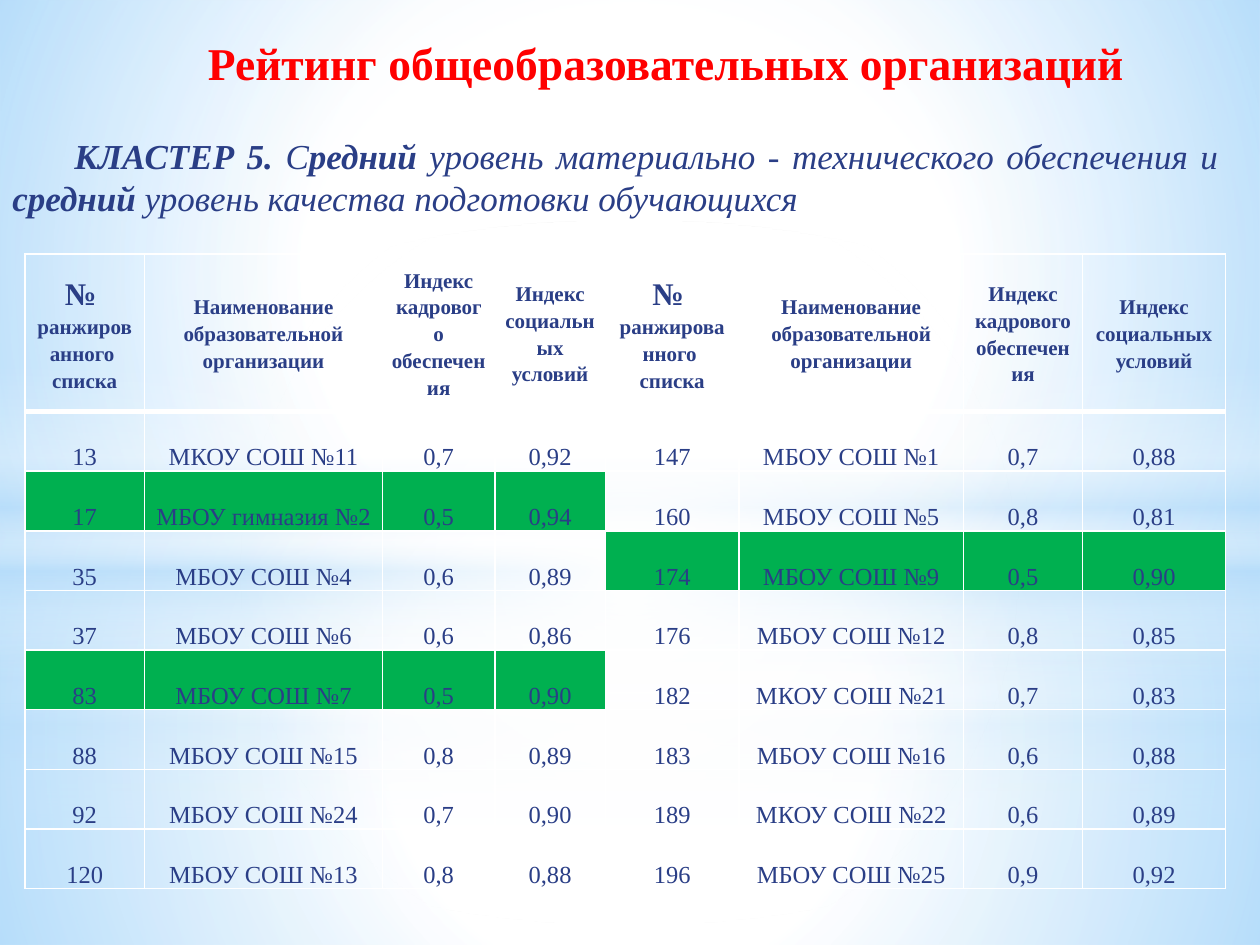
from lxml import etree
from pptx import Presentation
from pptx.dml.color import RGBColor
from pptx.enum.shapes import MSO_SHAPE
from pptx.enum.text import MSO_ANCHOR, PP_ALIGN
from pptx.oxml import parse_xml
from pptx.oxml.ns import nsdecls, qn
from pptx.util import Pt

RECT, OVAL = MSO_SHAPE.RECTANGLE, MSO_SHAPE.OVAL
MIDDLE, BOTTOM = MSO_ANCHOR.MIDDLE, MSO_ANCHOR.BOTTOM
LEFT, CENTER, JUSTIFY = PP_ALIGN.LEFT, PP_ALIGN.CENTER, PP_ALIGN.JUSTIFY


class Theme:
    font = "Times New Roman"
    white, sky = "FFFFFF", "B4DCFA"
    red, navy, green = "FF0000", "2A3E86", "00B050"
    title, lead, mark, head, body = 26, 20, 18, 12, 14


# Backdrop: gradient stops are (position, colour, opacity) in percent
def halo(mid, *alphas):
    return list(zip((0, mid, 100), (Theme.white, Theme.white, Theme.sky), alphas))


def glow(end):
    return [(0, Theme.white, 100), (end, Theme.white, 0)]


BAND = [(0, Theme.white, 0), (29, Theme.white, 30), (45, Theme.sky, 40),
        (55, Theme.white, 26), (65, Theme.sky, 60), (100, Theme.white, 0)]

# Kind, top, height, stops; every layer spans the slide width
LAYERS = [
    (RECT, 401.8, 138.2, halo(37, 91, 76, 79)),
    (RECT, 0, 401.8, halo(48, 89, 62, 79)),
    (RECT, 296.6, 180, BAND),
    (OVAL, 126, 401.8, glow(56)),
    (RECT, 304.6, 235.4, halo(37, 92, 77, 80)),
    (RECT, 0, 304.6, halo(48, 90, 63, 80)),
    (RECT, 208.8, 180, BAND),
    (OVAL, 126, 401.8, glow(54)),
]

# Table content
MARK = "№ "
HEADS = [
    [MARK, "ранжированного ", "списка"],
    ["Наименование образовательной организации"],
    ["Индекс кадрового обеспечения"],
    ["Индекс социальных условий"],
]
LOWER = [
    ("13", "МКОУ СОШ №11", "0,7", "0,92"),
    ("17", "МБОУ гимназия №2", "0,5", "0,94"),
    ("35", "МБОУ СОШ №4", "0,6", "0,89"),
    ("37", "МБОУ СОШ №6", "0,6", "0,86"),
    ("83", "МБОУ СОШ №7", "0,5", "0,90"),
    ("88", "МБОУ СОШ №15", "0,8", "0,89"),
    ("92", "МБОУ СОШ №24", "0,7", "0,90"),
    ("120", "МБОУ СОШ №13", "0,8", "0,88"),
]
UPPER = [
    ("147", "МБОУ СОШ №1", "0,7", "0,88"),
    ("160", "МБОУ СОШ №5", "0,8", "0,81"),
    ("174", "МБОУ СОШ №9", "0,5", "0,90"),
    ("176", "МБОУ СОШ №12", "0,8", "0,85"),
    ("182", "МКОУ СОШ №21", "0,7", "0,83"),
    ("183", "МБОУ СОШ №16", "0,6", "0,88"),
    ("189", "МКОУ СОШ №22", "0,6", "0,89"),
    ("196", "МБОУ СОШ №25", "0,9", "0,92"),
]
PICKED = {"17", "83", "174"}
WIDTHS = [68.4, 136, 64.2, 63.2, 76.4, 128.2, 68.2, 81.6]
HEAD_ROW, BODY_ROW = 90, 34.1

# Lead text as (text, bold)
LEAD = [
    ("КЛАСТЕР 5.", True), (" С", False), ("редний", True),
    (" уровень материально - технического обеспечения и ", False),
    ("средний", True), (" уровень качества подготовки обучающихся", False),
]


def write(para, text, size=Theme.body, color=Theme.navy, bold=False,
          italic=False, align=CENTER, spacing=None, indent=None):
    """Add one formatted run to a paragraph."""
    para.alignment = align
    if spacing:
        para.line_spacing = spacing
    if indent:
        props = para._p.get_or_add_pPr()
        props.set("marL", "0")
        props.set("indent", str(Pt(indent)))
    run = para.add_run()
    run.text = text
    font = run.font
    font.name, font.size = Theme.font, Pt(size)
    font.bold, font.italic = bold, italic
    font.color.rgb = RGBColor.from_string(color)


def add_layer(slide, kind, top, height, stops):
    shape = slide.shapes.add_shape(kind, 0, Pt(top), Pt(720), Pt(height))
    shape.shadow.inherit = False
    shape.line.fill.background()
    shape.fill.background()
    marks = "".join(
        f'<a:gs pos="{pos * 1000}"><a:srgbClr val="{color}">'
        f'<a:alpha val="{alpha * 1000}"/></a:srgbClr></a:gs>'
        for pos, color, alpha in stops)
    if stops is BAND:
        way = '<a:lin ang="5400000" scaled="0"/>'
    else:
        way = ('<a:path path="circle"><a:fillToRect l="50000" t="50000" '
               'r="50000" b="50000"/></a:path>')
    grad = parse_xml(f'<a:gradFill {nsdecls("a")} rotWithShape="1">'
                     f'<a:gsLst>{marks}</a:gsLst>{way}</a:gradFill>')
    props = shape._element.spPr
    props.replace(props.find(qn("a:noFill")), grad)


def add_box(slide, left, top, width, height, wrap):
    frame = slide.shapes.add_textbox(
        Pt(left), Pt(top), Pt(width), Pt(height)).text_frame
    frame.word_wrap = wrap
    frame.vertical_anchor = MIDDLE
    return frame.paragraphs[0]


def set_edges(cell, top=1, bottom=1):
    props = cell._tc.get_or_add_tcPr()
    for side, width in zip("LRTB", (1, 1, top, bottom)):
        line = etree.SubElement(props, qn(f"a:ln{side}"), w=str(Pt(width)))
        fill = etree.SubElement(line, qn("a:solidFill"))
        etree.SubElement(fill, qn("a:srgbClr"), val=Theme.white)


def fill_cell(cell, lines, anchor, fill=None, top=1, bottom=1, **style):
    set_edges(cell, top, bottom)
    cell.vertical_anchor = anchor
    cell.margin_left = cell.margin_right = Pt(5)
    cell.margin_top = cell.margin_bottom = 0
    if fill:
        cell.fill.solid()
        cell.fill.fore_color.rgb = RGBColor.from_string(fill)
    else:
        cell.fill.background()
    frame = cell.text_frame
    for i, line in enumerate(lines):
        para = frame.add_paragraph() if i else frame.paragraphs[0]
        look = style | {"size": Theme.mark} if line == MARK else style
        write(para, line, spacing=1.15, **look)


def add_rating(slide, left, top):
    count = len(LOWER)
    table = slide.shapes.add_table(
        count + 1, len(WIDTHS), Pt(left), Pt(top), Pt(sum(WIDTHS)),
        Pt(HEAD_ROW + count * BODY_ROW)).table
    table.first_row = table.horz_banding = False
    for col, width in zip(table.columns, WIDTHS):
        col.width = Pt(width)
    for i, row in enumerate(table.rows):
        row.height = Pt(BODY_ROW if i else HEAD_ROW)
    # Heading row, the same four labels for both halves
    for c, lines in enumerate(HEADS * 2):
        fill_cell(table.cell(0, c), lines, MIDDLE, bottom=3,
                  size=Theme.head, bold=True)
    # Schools, with the picked ones in green
    for half, schools in enumerate((LOWER, UPPER)):
        for r, school in enumerate(schools, 1):
            fill = Theme.green if school[0] in PICKED else None
            for c, text in enumerate(school, half * len(HEADS)):
                fill_cell(table.cell(r, c), [text], BOTTOM, fill,
                          top=3 if r == 1 else 1)


def main():
    deck = Presentation()
    deck.slide_width, deck.slide_height = Pt(720), Pt(540)
    slide = deck.slides.add_slide(deck.slide_layouts[6])

    # Backdrop
    for layer in LAYERS:
        add_layer(slide, *layer)

    # Title
    title = add_box(slide, 76.3, 16, 579, 39, False)
    write(title, "Рейтинг общеобразовательных организаций", size=Theme.title,
          color=Theme.red, bold=True, align=LEFT, indent=35.4)

    # Rating table
    add_rating(slide, 14.2, 145.2)

    # Lead
    lead = add_box(slide, 0, 73, 703.4, 55.7, True)
    for text, bold in LEAD:
        write(lead, text, size=Theme.lead, bold=bold, italic=True,
              align=JUSTIFY, indent=35.4)

    deck.save("out.pptx")


if __name__ == "__main__":
    main()
